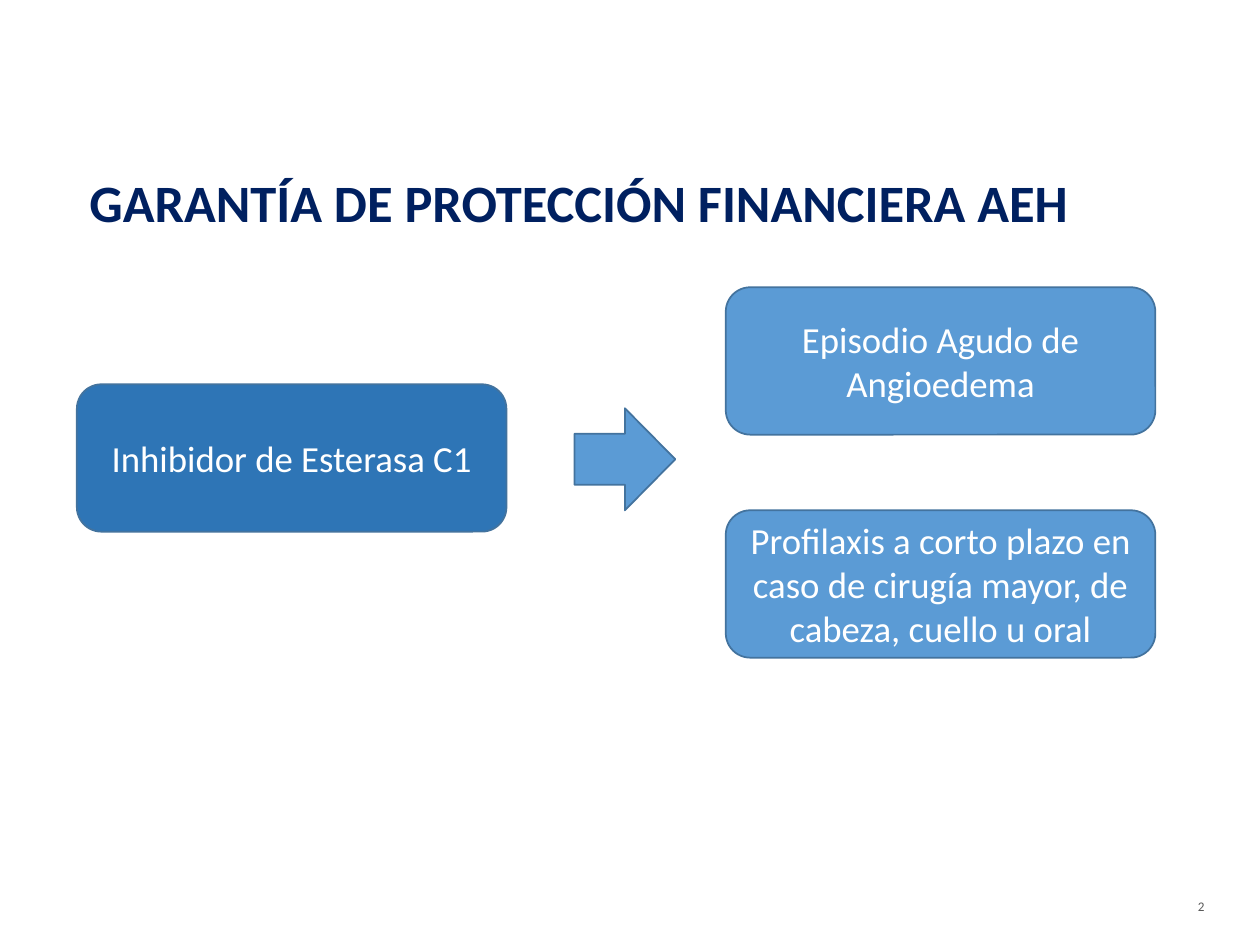
from pptx import Presentation
from pptx.dml.color import RGBColor
from pptx.enum.shapes import MSO_SHAPE as Shape
from pptx.enum.text import MSO_ANCHOR as Anchor, MSO_AUTO_SIZE as AutoSize, PP_ALIGN as Align
from pptx.util import Inches, Pt

COLORS = {
    "navy": "002060",
    "treatment": "2E75B6",
    "indication": "5B9BD5",
    "outline": "43739E",
    "white": "FFFFFF",
    "gray": "595959",
}
BOX_SIZE = (3.41, 1.17)
TREATMENT = "Inhibidor de Esterasa C1"
INDICATIONS = [
    "Episodio Agudo de Angioedema",
    "Profilaxis a corto plazo en caso de cirugía mayor, de cabeza, cuello u oral",
]
INDICATION_LEFT, INDICATION_TOP, INDICATION_STEP = 5.76, 2.28, 1.77


def rgb(name):
    return RGBColor.from_string(COLORS[name])


def apply_format(target, values):
    for attribute, value in values.items():
        setattr(target, attribute, value)


def write_text(frame, text, size, color, align, bold=False, **frame_format):
    apply_format(frame, {"word_wrap": True, "auto_size": AutoSize.NONE, **frame_format})
    frame.text = text
    paragraph = frame.paragraphs[0]
    apply_format(paragraph, {"alignment": align, "space_before": Pt(0)})
    apply_format(paragraph.font, {"name": "Calibri", "size": Pt(size), "bold": bold})
    paragraph.font.color.rgb = rgb(color)


def add_title(slide, text):
    title = slide.shapes.title
    bounds = {"left": 0.61, "top": 1.27, "width": 8.67, "height": 0.81}
    apply_format(title, {side: Inches(length) for side, length in bounds.items()})
    write_text(title.text_frame, text, 30, "navy", Align.LEFT, bold=True,
               vertical_anchor=Anchor.TOP, margin_top=Inches(0.08))


def add_filled_shape(slide, kind, left, top, width, height, fill):
    shape = slide.shapes.add_shape(kind, *map(Inches, (left, top, width, height)))
    shape.shadow.inherit = False
    shape.fill.solid()
    shape.fill.fore_color.rgb = rgb(fill)
    shape.line.color.rgb = rgb("outline")
    shape.line.width = Pt(1)
    return shape


def add_box(slide, text, left, top, fill):
    box = add_filled_shape(slide, Shape.ROUNDED_RECTANGLE, left, top, *BOX_SIZE, fill)
    write_text(box.text_frame, text, 21, "white", Align.CENTER,
               vertical_anchor=Anchor.MIDDLE)


def add_page_number(slide, number):
    label = slide.shapes.add_textbox(*map(Inches, (9.3, 7.08, 0.36, 0.23)))
    write_text(label.text_frame, number, 7.5, "gray", Align.RIGHT,
               word_wrap=False, auto_size=AutoSize.SHAPE_TO_FIT_TEXT)


def main():
    deck = Presentation()
    apply_format(deck, {"slide_width": Inches(10), "slide_height": Inches(7.5)})
    slide = deck.slides.add_slide(deck.slide_layouts[5])
    add_page_number(slide, "2")
    add_title(slide, "GARANTÍA DE PROTECCIÓN FINANCIERA AEH")
    add_box(slide, TREATMENT, 0.61, 3.05, "treatment")
    for row, indication in enumerate(INDICATIONS):
        top = INDICATION_TOP + row * INDICATION_STEP
        add_box(slide, indication, INDICATION_LEFT, top, "indication")
    add_filled_shape(slide, Shape.RIGHT_ARROW, 4.56, 3.24, 0.8, 0.81, "indication")
    deck.save("out.pptx")


if __name__ == "__main__":
    main()
